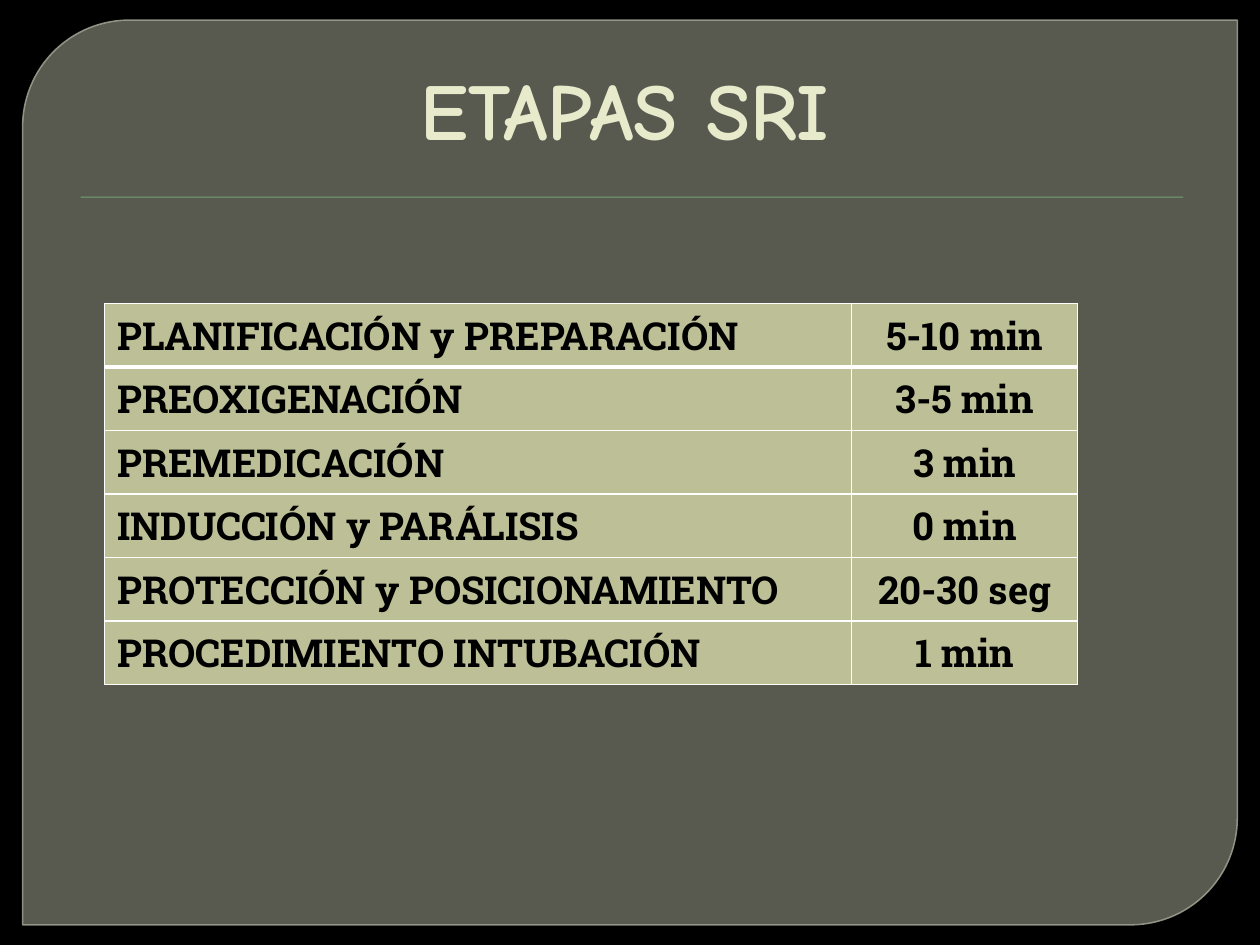
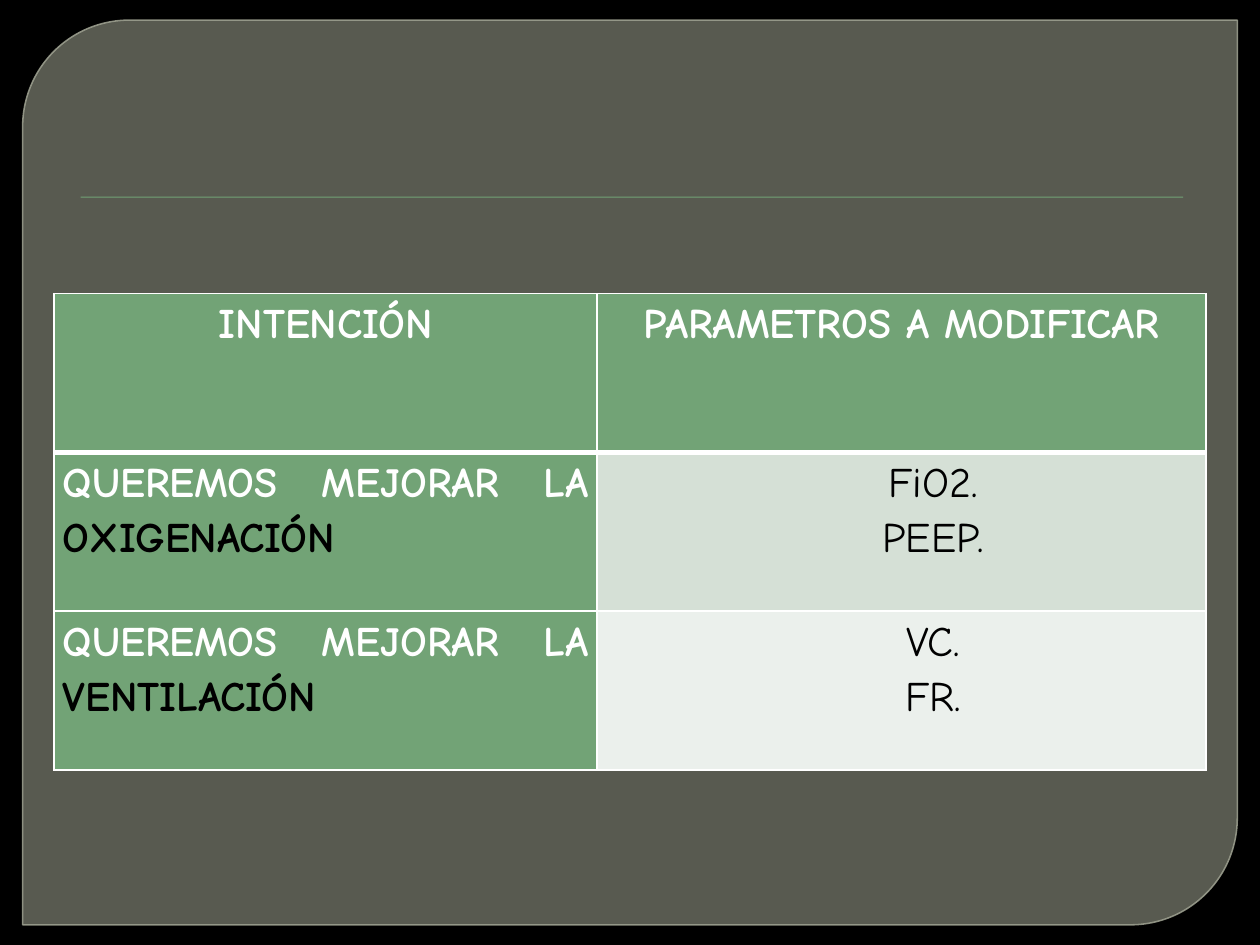
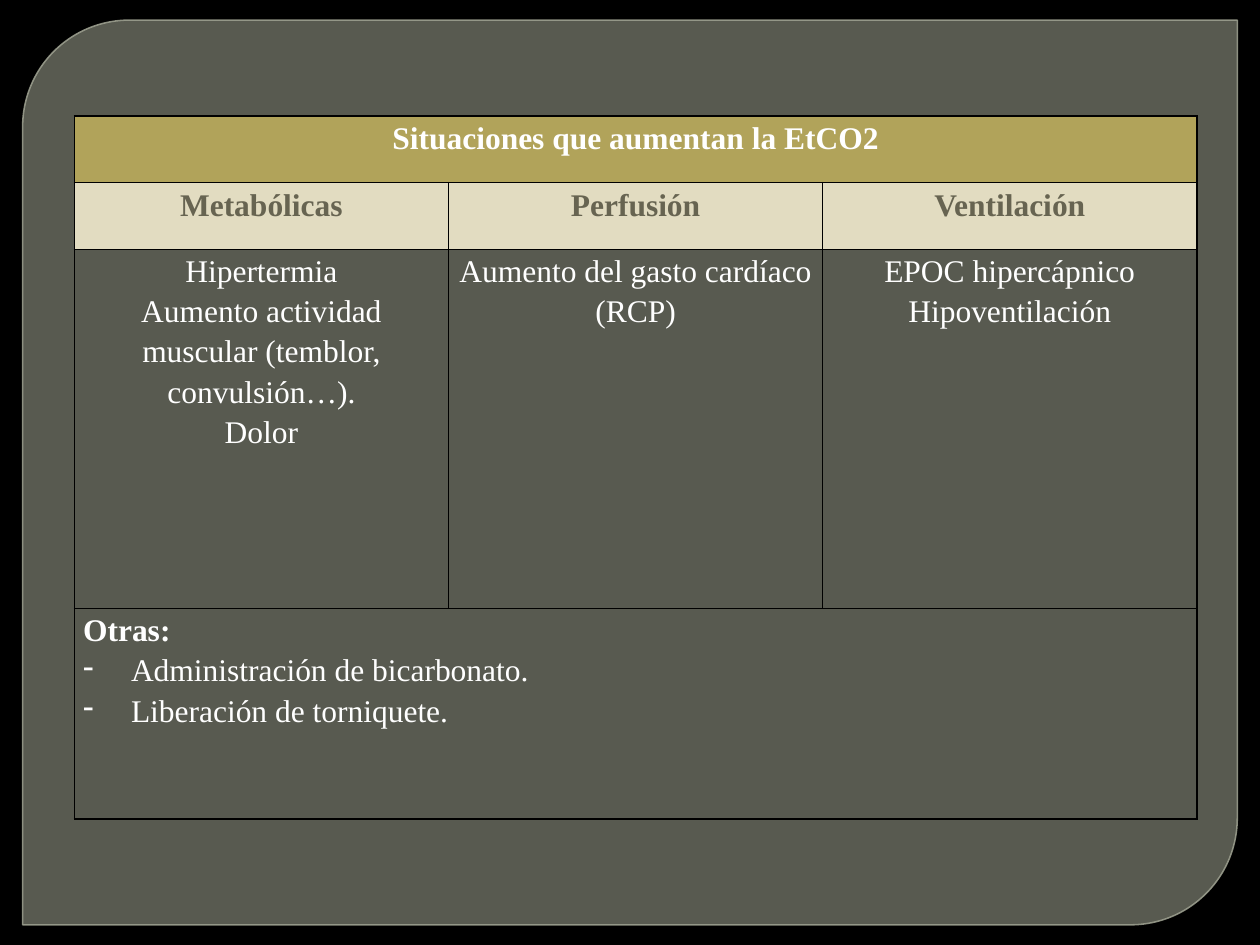
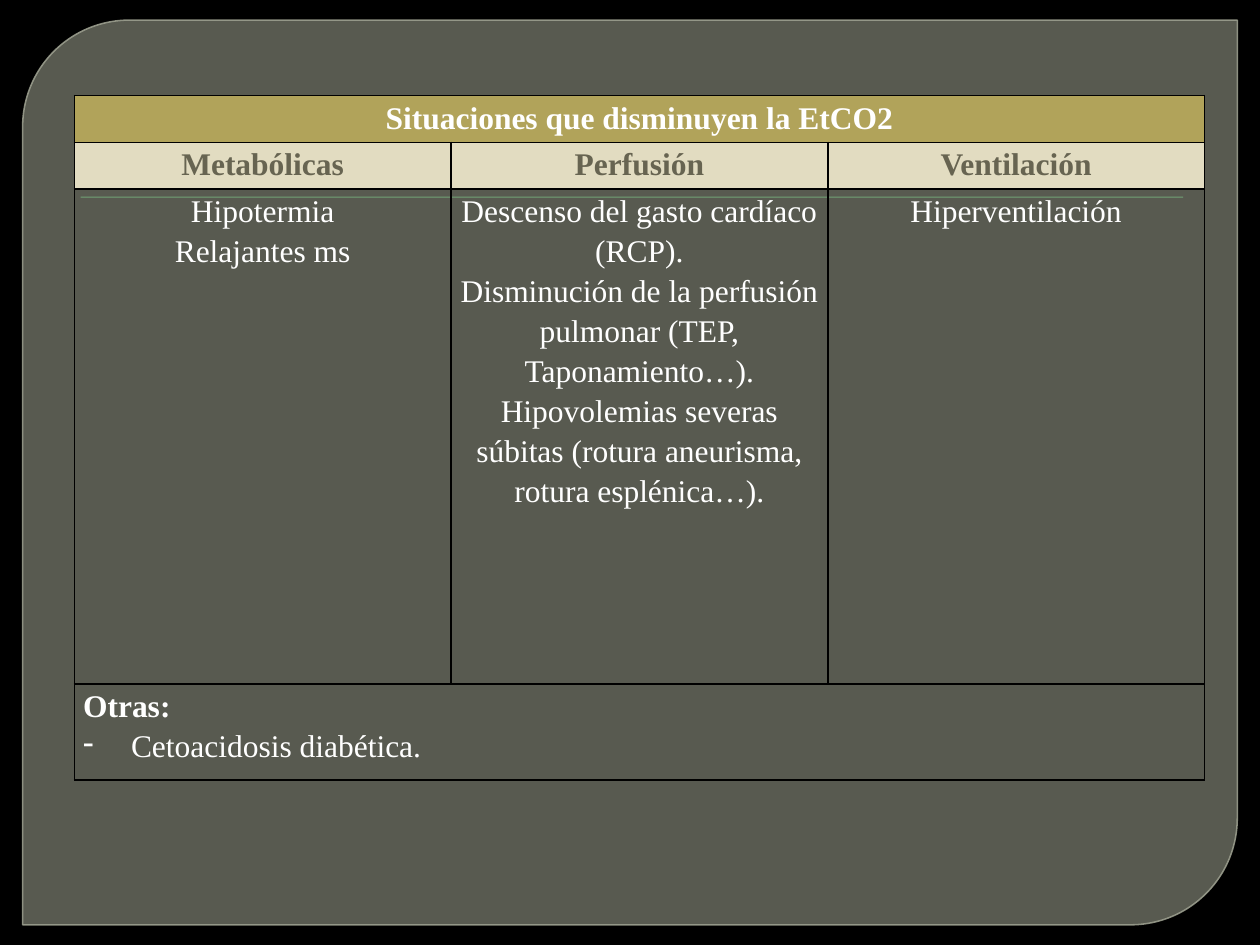
from lxml import etree
from pptx import Presentation
from pptx.dml.color import RGBColor
from pptx.enum.shapes import MSO_SHAPE
from pptx.enum.text import MSO_ANCHOR, MSO_AUTO_SIZE, PP_ALIGN
from pptx.oxml.ns import qn
from pptx.util import Inches, Pt

LEFT, CENTER, JUSTIFY = PP_ALIGN.LEFT, PP_ALIGN.CENTER, PP_ALIGN.JUSTIFY
DIAGONAL_ROUND, RECTANGLE = MSO_SHAPE.ROUND_2_DIAG_RECTANGLE, MSO_SHAPE.RECTANGLE
BOTTOM, NO_FIT = MSO_ANCHOR.BOTTOM, MSO_AUTO_SIZE.NONE
TITLE_ONLY, BLANK = 5, 6
COMIC, SLAB, SERIF = "Comic Neue", "Roboto Slab", "Times New Roman"
COLORS = {
    "black": "000000", "white": "FFFFFF", "panel": "888B7B", "panel_line": "9DA090",
    "green": "72A376", "green_light": "D5E0D6", "green_pale": "EBF0EC",
    "title": "E7EACB", "olive": "BDC097", "gold": "B1A35A", "sand": "E2DCC1", "taupe": "676451",
}
RGB = {name: RGBColor.from_string(value) for name, value in COLORS.items()}


def add_grid(slide, left, top, columns, rows, border, margins=(0.07, 0), header_line=1):
    frame = slide.shapes.add_table(len(rows), len(columns), Inches(left), Inches(top),
                                   Inches(sum(columns)), Inches(sum(rows)))
    grid = frame.table
    grid.first_row = grid.horz_banding = False
    for column, width in zip(grid.columns, columns):
        column.width = Inches(width)
    for index, (row, height) in enumerate(zip(grid.rows, rows)):
        row.height = Inches(height)
        for cell in row.cells:
            cell.margin_left = cell.margin_right = Inches(margins[0])
            cell.margin_top = cell.margin_bottom = Inches(margins[1])
            cell.fill.background()
            widths = {"lnL": 1, "lnR": 1, "lnT": header_line if index == 1 else 1,
                      "lnB": header_line if index == 0 else 1}
            properties = cell._tc.get_or_add_tcPr()
            for position, (side, width) in enumerate(widths.items()):
                line = etree.Element(qn(f"a:{side}"), w=str(Pt(width)))
                solid = etree.SubElement(line, qn("a:solidFill"))
                etree.SubElement(solid, qn("a:srgbClr"), val=COLORS[border])
                properties.insert(position, line)
    return grid


def write_cell(cell, lines, font, size, color, bold=False, align=CENTER, fill=None, spacing=1.15):
    cell.text_frame.text = "\n".join(lines)
    for para in cell.text_frame.paragraphs:
        para.alignment = align
        para.line_spacing = spacing
        for span in para.runs:
            span.font.name = font
            span.font.size = Pt(size)
            span.font.bold = bold
            span.font.color.rgb = RGB[color]
    if fill:
        cell.fill.solid()
        cell.fill.fore_color.rgb = RGB[fill]


deck = Presentation()
deck.slide_width, deck.slide_height = Inches(10), Inches(7.5)
master = deck.slide_master
master.background.fill.solid()
master.background.fill.fore_color.rgb = RGB["black"]

stages_slide = deck.slides.add_slide(deck.slide_layouts[TITLE_ONLY])

panel = stages_slide.shapes.add_shape(DIAGONAL_ROUND, Inches(0.18), Inches(0.16), Inches(9.64), Inches(7.18))
panel.adjustments[0], panel.adjustments[1] = 0.118, 0
panel.shadow.inherit = False
panel.fill.solid()
panel.fill.fore_color.rgb = RGB["panel"]
panel.line.color.rgb = RGB["panel_line"]
panel.line.width = Pt(0.87)
for color, opacity in zip(panel.element.spPr.iter(qn("a:srgbClr")), (65, 88)):
    etree.SubElement(color, qn("a:alpha"), val=str(opacity * 1000))

rule = stages_slide.shapes.add_shape(RECTANGLE, Inches(0.64), Inches(1.56), Inches(8.75), Inches(0.01))
rule.shadow.inherit = False
rule.fill.solid()
rule.fill.fore_color.rgb = RGB["green"]
rule.line.fill.background()
effects = rule.element.spPr.find(qn("a:effectLst"))
shadow = etree.SubElement(effects, qn("a:outerShdw"), blurRad=str(Pt(1)), dist=str(Pt(1)), dir="5400000")
shadow_color = etree.SubElement(shadow, qn("a:srgbClr"), val=COLORS["black"])
etree.SubElement(shadow_color, qn("a:alpha"), val="75000")

for position, shape in enumerate((panel, rule)):
    shape.element.nvSpPr.cNvPr.set("id", str(20 + position))
    master.shapes.element.insert(2 + position, shape.element)

title = stages_slide.shapes.title
title.left, title.top, title.width, title.height = Inches(0.43), Inches(0.36), Inches(9), Inches(0.93)
title.text_frame.text = "ETAPAS SRI"
title.text_frame.vertical_anchor = BOTTOM
title.text_frame.auto_size = NO_FIT
heading = title.text_frame.paragraphs[0]
heading.alignment = CENTER
heading._p.get_or_add_pPr().set("marL", str(Inches(0.06)))
heading_font = heading.runs[0].font
heading_font.name, heading_font.size, heading_font.bold = COMIC, Pt(46), True
heading_font.color.rgb = RGB["title"]

stages = [
    ("PLANIFICACIÓN y PREPARACIÓN", "5-10 min"),
    ("PREOXIGENACIÓN", "3-5 min"),
    ("PREMEDICACIÓN", "3 min"),
    ("INDUCCIÓN y PARÁLISIS", "0 min"),
    ("PROTECCIÓN y POSICIONAMIENTO", "20-30 seg"),
    ("PROCEDIMIENTO INTUBACIÓN", "1 min"),
]
grid = add_grid(stages_slide, 0.83, 2.41, [5.93, 1.79], [0.47] * len(stages), "white", (0.1, 0.05), 3)
for row, stage in enumerate(stages):
    for column, align in enumerate((LEFT, CENTER)):
        write_cell(grid.cell(row, column), [stage[column]], SLAB, 22, "black", True, align, "olive", 1.0)

goals_slide = deck.slides.add_slide(deck.slide_layouts[BLANK])
grid = add_grid(goals_slide, 0.43, 2.33, [4.31, 4.83], [1.26] * 3, "white", header_line=3)
for column, label in enumerate(("INTENCIÓN", "PARAMETROS A MODIFICAR")):
    write_cell(grid.cell(0, column), [label], COMIC, 24, "white", True, fill="green")
goals = [
    ("OXIGENACIÓN", ["FiO2.", "PEEP."], "green_light"),
    ("VENTILACIÓN", ["VC.", "FR."], "green_pale"),
]
for row, (goal, parameters, fill) in enumerate(goals, start=1):
    goal_cell, parameter_cell = grid.cell(row, 0), grid.cell(row, 1)
    write_cell(goal_cell, ["QUEREMOS MEJORAR LA "], COMIC, 24, "white", True, JUSTIFY, "green")
    span = goal_cell.text_frame.paragraphs[0].add_run()
    span.text = goal
    span.font.name, span.font.size, span.font.bold = COMIC, Pt(24), True
    span.font.color.rgb = RGB["black"]
    write_cell(parameter_cell, parameters, COMIC, 24, "black", fill=fill)
    for para in parameter_cell.text_frame.paragraphs:
        para._p.get_or_add_pPr().set("marL", str(Inches(0.5)))

situations = [
    {
        "title": "Situaciones que aumentan la EtCO2",
        "top": 0.92, "column": 2.97, "rows": [0.53, 0.53, 2.85, 1.67],
        "causes": [
            ["Hipertermia", "Aumento actividad muscular (temblor, convulsión…).", "Dolor"],
            ["Aumento del gasto cardíaco (RCP)"],
            ["EPOC hipercápnico", "Hipoventilación"],
        ],
        "others": ["Administración de bicarbonato.", "Liberación de torniquete."],
    },
    {
        "title": "Situaciones que disminuyen la EtCO2",
        "top": 0.76, "column": 2.99, "rows": [0.37, 0.37, 3.93, 0.76],
        "causes": [
            ["Hipotermia", "Relajantes ms"],
            ["Descenso del gasto cardíaco (RCP).",
             "Disminución de la perfusión pulmonar (TEP, Taponamiento…).",
             "Hipovolemias severas súbitas (rotura aneurisma, rotura esplénica…)."],
            ["Hiperventilación"],
        ],
        "others": ["Cetoacidosis diabética."],
    },
]
for situation in situations:
    slide = deck.slides.add_slide(deck.slide_layouts[BLANK])
    grid = add_grid(slide, 0.59, situation["top"], [situation["column"]] * 3, situation["rows"], "black")
    for row in (0, 3):
        grid.cell(row, 0).merge(grid.cell(row, 2))
    write_cell(grid.cell(0, 0), [situation["title"]], SERIF, 18, "white", True, fill="gold")
    for column, label in enumerate(("Metabólicas", "Perfusión", "Ventilación")):
        write_cell(grid.cell(1, column), [label], SERIF, 18, "taupe", True, fill="sand")
        write_cell(grid.cell(2, column), situation["causes"][column], SERIF, 18, "white")
    others_cell = grid.cell(3, 0)
    write_cell(others_cell, ["Otras:"] + situation["others"], SERIF, 18, "white", align=LEFT)
    others_label, *others = others_cell.text_frame.paragraphs
    others_label.runs[0].font.bold = True
    for para in others:
        properties = para._p.get_or_add_pPr()
        properties.set("marL", str(Inches(0.38)))
        properties.set("indent", str(-Inches(0.38)))
        etree.SubElement(properties, qn("a:buChar"), char="-")

deck.save("out.pptx")
